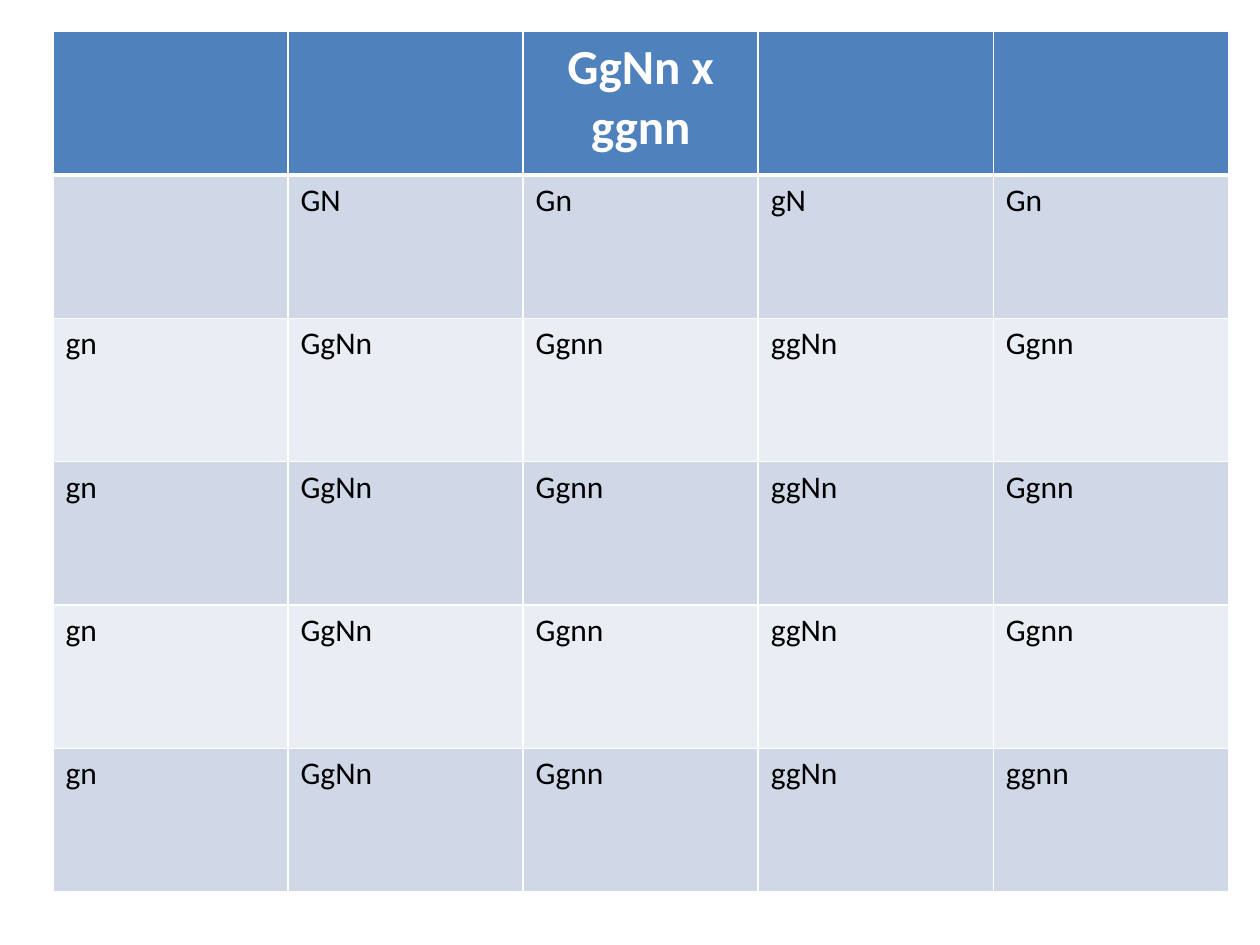
from pptx import Presentation, util as u
from pptx.dml.color import RGBColor
from pptx.enum import text
from pptx.oxml.ns import qn
from lxml import etree

# Content: title row, gametes of one parent, then the crosses
CROSS = "GgNn x ggnn"
GAMETES = ["", "GN", "Gn", "gN", "Gn"]
OFFSPRING = ["gn", "GgNn", "Ggnn", "ggNn", "Ggnn"]
PUNNETT = [["", "", CROSS, "", ""], GAMETES] + [OFFSPRING] * 3 + [OFFSPRING[:-1] + ["ggnn"]]

# Look
COLORS = {"header": "4F81BD", "odd": "D0D8E8", "even": "E9EDF4",
          "line": "FFFFFF", "title": "FFFFFF", "body": "000000"}
TITLE_FONT = {"name": "Calibri", "size": u.Pt(28), "bold": True}
BODY_FONT = {"name": "Calibri", "size": u.Pt(18), "bold": False}

# Grid
SLIDE_W, SLIDE_H = u.Inches(10), u.Inches(7.5)
LEFT, TOP = u.Inches(0.42), u.Inches(0.25)
GRID_W, GRID_H = u.Inches(9.33), u.Inches(6.83)


def set_borders(cell, widths):
    """Draw the cell's borders; they must come before its fill."""
    props = cell._tc.get_or_add_tcPr()
    for place, (side, points) in enumerate(widths.items()):
        line = etree.Element(qn(f"a:ln{side}"), w=str(u.Pt(points)))
        fill = etree.SubElement(line, qn("a:solidFill"))
        etree.SubElement(fill, qn("a:srgbClr"), val=COLORS["line"])
        props.insert(place, line)


def fill_cell(cell, words, row):
    header = row == 0
    band = "header" if header else "odd" if row % 2 else "even"
    cell.fill.solid()
    cell.fill.fore_color.rgb = RGBColor.from_string(COLORS[band])
    set_borders(cell, {"L": 1, "R": 1, "T": 3 if row == 1 else 1, "B": 3 if header else 1})
    if not words:
        return
    paragraph = cell.text_frame.paragraphs[0]
    if header:
        paragraph.alignment = text.PP_ALIGN.CENTER
    run = paragraph.add_run()
    run.text = words
    for key, value in (TITLE_FONT if header else BODY_FONT).items():
        setattr(run.font, key, value)
    run.font.color.rgb = RGBColor.from_string(COLORS["title" if header else "body"])


def main():
    deck = Presentation()
    deck.slide_width, deck.slide_height = SLIDE_W, SLIDE_H
    slide = deck.slides.add_slide(deck.slide_layouts[6])

    # Punnett square
    square = slide.shapes.add_table(len(PUNNETT), len(GAMETES), LEFT, TOP, GRID_W, GRID_H).table
    for r, genotypes in enumerate(PUNNETT):
        for c, genotype in enumerate(genotypes):
            fill_cell(square.cell(r, c), genotype, r)

    deck.save("out.pptx")


if __name__ == "__main__":
    main()
